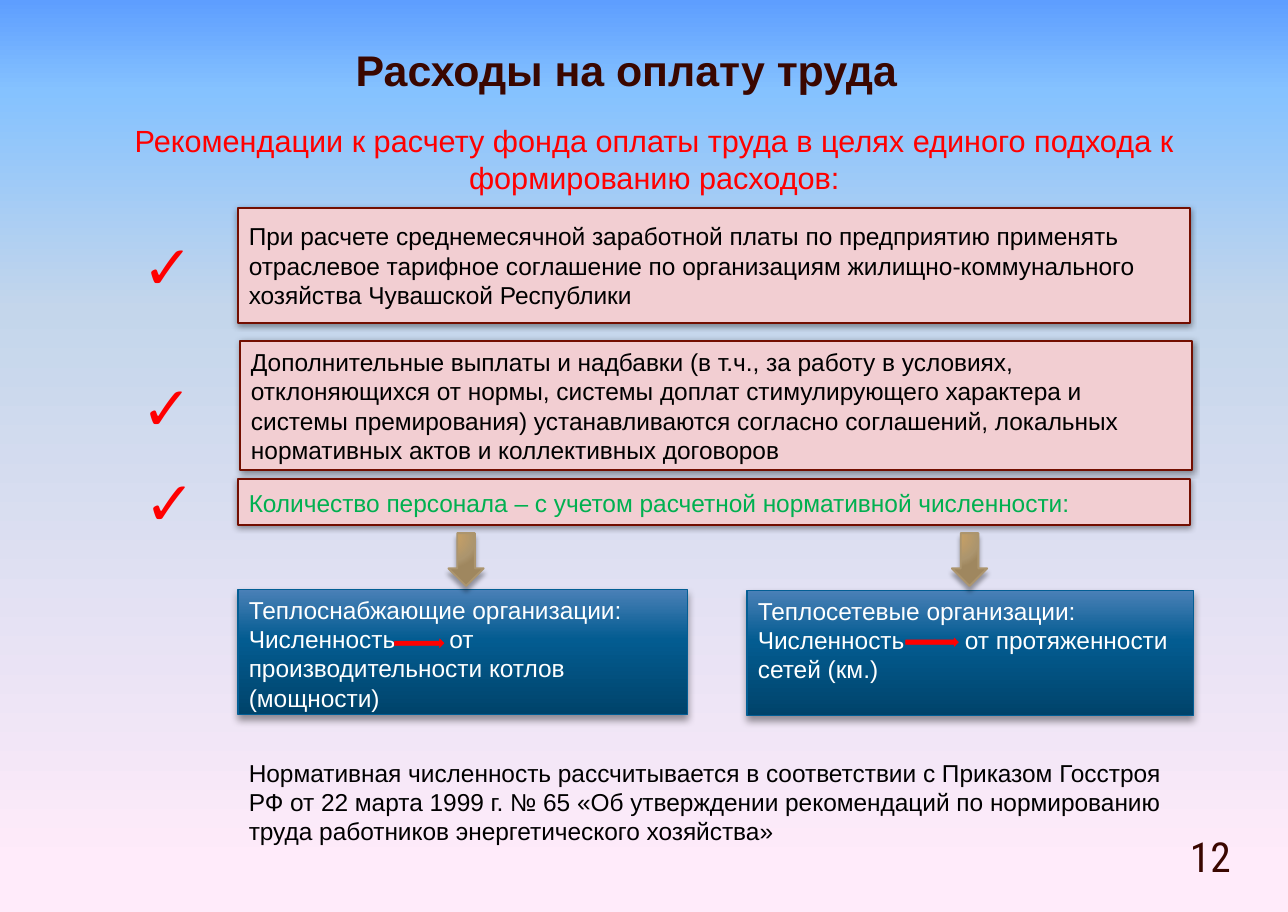
import pptx
import pptx.util
import pptx.dml.color
import pptx.enum.shapes
import pptx.enum.text
import pptx.oxml
import pptx.oxml.ns
from lxml import etree

INK = {"brown": "3A0700", "red": "FF0000", "black": "000000",
       "green": "00B050", "white": "FFFFFF", "pink": "F2CED2",
       "wine": "730E00", "blue": "035E94", "tan": "AC956E"}
SKY = [(0, "5E9EFF"), (10, "85C2FF"), (34, "C4D6EB"), (95, "FFEBFA")]
SEA = [(0, "00436A"), (60, "035C91"), (100, "4A80B7")]
SAND = [(0, "CEA363"), (76, "AC956E"), (100, "9F875F")]

Pt = pptx.util.Pt
Kind = pptx.enum.shapes.MSO_SHAPE
Align = pptx.enum.text.PP_ALIGN
Anchor = pptx.enum.text.MSO_ANCHOR
qn = pptx.oxml.ns.qn
CELL = pptx.util.Inches(0.1)  # the grid step

deck = pptx.Presentation()
deck.slide_width = round(116.9 * CELL)
deck.slide_height = round(82.8 * CELL)
slide = deck.slides.add_slide(deck.slide_layouts[5])


def fade(fill, root, stops, angle=None):
    """Fill with colour stops: along an angle, or round a centre if none."""
    fill.gradient()
    grad = root.find(".//" + qn("a:gradFill"))
    for old in list(grad):
        grad.remove(old)
    row = etree.SubElement(grad, qn("a:gsLst"))
    for pos, hue in stops:
        stop = etree.SubElement(row, qn("a:gs"), pos=str(pos * 1000))
        etree.SubElement(stop, qn("a:srgbClr"), val=hue)
    if angle is None:
        way = etree.SubElement(grad, qn("a:path"), {"path": "circle"})
        etree.SubElement(way, qn("a:fillToRect"), l="15000", t="15000",
                         r="100000", b="100000")
    else:
        etree.SubElement(grad, qn("a:lin"), ang=str(angle * 60000), scaled="0")


def put(at, text="", size=16, ink="black", kind=None, fill=None, line=None,
        shade=None, align=Align.LEFT, anchor=Anchor.TOP, shape=None,
        font="Arial", bold=False, wrap=True, tab=None):
    """Place a shape, text box or given placeholder, in grid steps."""
    place = [round(n * CELL) for n in at]
    if kind is not None:
        shape = slide.shapes.add_shape(kind, *place)
        shape.shadow.inherit = False
    elif shape is None:
        shape = slide.shapes.add_textbox(*place)
    shape.left, shape.top, shape.width, shape.height = place
    if isinstance(fill, list):
        fade(shape.fill, shape.element, fill, 270 if text else None)
    elif fill:
        shape.fill.solid()
        shape.fill.fore_color.rgb = pptx.dml.color.RGBColor.from_string(INK[fill])
    if line:
        shape.line.color.rgb = pptx.dml.color.RGBColor.from_string(INK[line[0]])
        shape.line.width = Pt(line[1])
    if shade:
        alpha, blur, dist, angle = shade
        glow = etree.SubElement(
            shape.element.spPr.find(qn("a:effectLst")), qn("a:outerShdw"),
            blurRad=str(Pt(blur)), dist=str(Pt(dist)),
            dir=str(angle * 60000), rotWithShape="0")
        hue = etree.SubElement(glow, qn("a:srgbClr"), val=INK["black"])
        etree.SubElement(hue, qn("a:alpha"), val=str(alpha * 1000))
    if text:
        frame = shape.text_frame
        frame.text = text
        frame.word_wrap = wrap
        frame.auto_size = pptx.enum.text.MSO_AUTO_SIZE.NONE
        frame.vertical_anchor = anchor
        for para in frame.paragraphs:
            para.alignment = align
            if tab:
                tabs = etree.SubElement(para._p.get_or_add_pPr(), qn("a:tabLst"))
                etree.SubElement(tabs, qn("a:tab"), pos=str(round(tab * CELL)), algn="l")
            para.font.name = font
            para.font.size = Pt(size)
            para.font.bold = bold
            para.font.color.rgb = pptx.dml.color.RGBColor.from_string(INK[ink])
    return shape


fade(slide.background.fill, slide.element, SKY, 90)

put((31, 3.5, 51.7, 5.7), "Расходы на оплату труда", 28, "brown",
    shape=slide.shapes.title, align=Align.CENTER, bold=True, wrap=False)
put((6.9, 10.6, 105, 7.7),
    "Рекомендации к расчету фонда оплаты труда в целях единого подхода "
    "к формированию расходов:", 20, "red", align=Align.CENTER)

# Advice boxes, each with its tick
LEFT, WIDE = 21.6, 86.4
advice = [
    (LEFT, 18.9, 10.4, 12.1, 20.2, "black",
     "При расчете среднемесячной заработной платы по предприятию применять "
     "отраслевое тарифное соглашение по организациям жилищно-коммунального "
     "хозяйства Чувашской Республики"),
    (LEFT + 0.2, 31, 11.7, 12, 33, "black",
     "Дополнительные выплаты и надбавки (в т.ч., за работу в условиях, "
     "отклоняющихся от нормы, системы доплат стимулирующего характера и "
     "системы премирования) устанавливаются согласно соглашений, локальных "
     "нормативных актов и коллективных договоров"),
    (LEFT, 43.5, 4.2, 12.2, 41.7, "green",
     "Количество персонала – с учетом расчетной нормативной численности:"),
]
for x, y, high, tick, rise, ink, text in advice:
    put((x, y, WIDE, high), text, ink=ink, kind=Kind.RECTANGLE, fill="pink",
        line=("wine", 1.25), shade=(40, 4, 1, 88), anchor=Anchor.MIDDLE)
    put((tick, rise, 6.4, 7.7), "✓", 40, "red", align=Align.CENTER,
        bold=True, wrap=False)

# Two kinds of firm: box, arrow above it, red arrow in its text
firms = [
    (LEFT, 53.5, 40.8, 39.9, 35.8, 58, 4.5, 18.2,
     "Теплоснабжающие организации:\n"
     "Численность\tот производительности котлов (мощности)"),
    (67.8, 53.6, 40.5, 85.6, 82.2, 57.9, 4.8, 18.8,
     "Теплосетевые организации:\n"
     "Численность\tот протяженности сетей (км.)"),
]
for x, y, wide, drop, dash, rise, span, tab, text in firms:
    put((x, y, wide, 11.4), text, ink="white", kind=Kind.RECTANGLE, fill=SEA,
        line=("blue", 0.75), shade=(40, 5.2, 3, 90), tab=tab)
    put((dash, rise, span, 0.8), kind=Kind.RIGHT_ARROW, fill="red",
        line=("red", 0.25))
    arrow = put((drop, 49.2, 4.8, 3.2), kind=Kind.RIGHT_ARROW, fill=SAND,
                line=("tan", 1.25), shade=(35, 3, 3, 90))
    arrow.rotation = 90

put((LEFT, 68.3, 86.7, 9.1),
    "Нормативная численность рассчитывается в соответствии с Приказом "
    "Госстроя РФ от 22 марта 1999 г. № 65 «Об утверждении рекомендаций по "
    "нормированию труда работников энергетического хозяйства»")
put((105, 75.5, 9.7, 4.4), "12", 27, "brown", align=Align.CENTER,
    anchor=Anchor.MIDDLE, font="Roboto Condensed")

deck.save("out.pptx")
